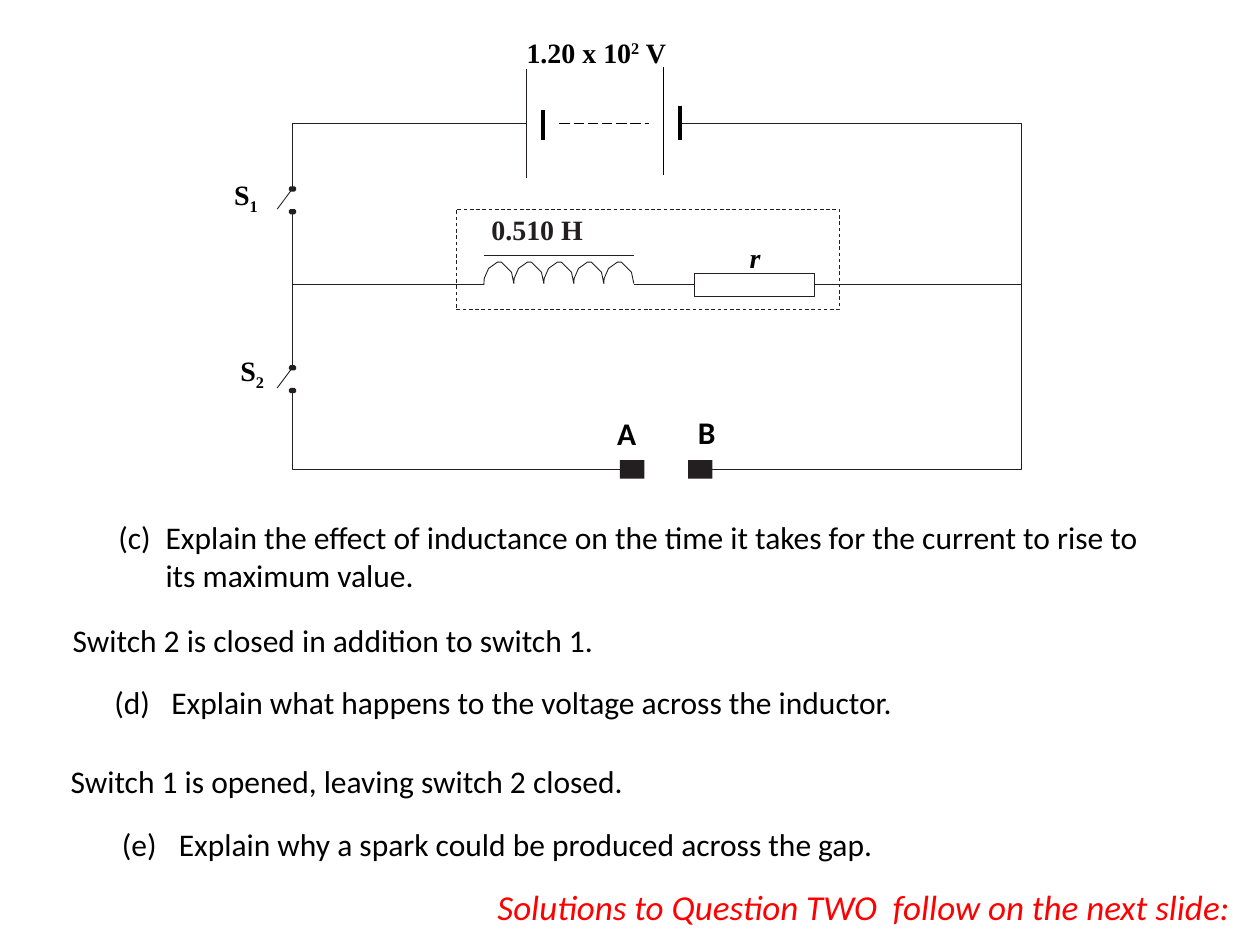
from lxml import etree
from pptx import Presentation
from pptx import util as u
from pptx.dml.color import RGBColor
from pptx.enum import dml, shapes, text
from pptx.oxml import ns

INK, BLACK, RED = "231F20", "000000", "FF0000"
SERIF, SANS = "Times New Roman", "Calibri"


def color(hex_string):
    return RGBColor.from_string(hex_string)


class Board:
    """Draws on one slide; every length is in points."""

    def __init__(self, slide):
        self.slide = slide
        self.thin = 0.5

    def outline(self, shape, width, hex_string=INK, dash=None):
        shape.line.color.rgb = color(hex_string)
        shape.line.width = u.Pt(width)
        if dash is not None:
            shape.line.dash_style = dash

    def line(self, start, end, width=None, hex_string=INK, dash=None):
        connector = self.slide.shapes.add_connector(
            shapes.MSO_CONNECTOR.STRAIGHT, *[u.Pt(v) for v in (*start, *end)])
        self.outline(connector, width or self.thin, hex_string, dash)
        properties = connector.element.find(ns.qn("p:spPr"))
        etree.SubElement(properties, ns.qn("a:effectLst"))
        return connector

    def bent_line(self, points):
        points = [(u.Pt(x), u.Pt(y)) for x, y in points]
        builder = self.slide.shapes.build_freeform(*points[0])
        builder.add_line_segments(points[1:], close=False)
        shape = builder.convert_to_shape()
        shape.fill.background()
        shape.shadow.inherit = False
        self.outline(shape, self.thin)

    def box(self, left, top, width, height, fill=None, dash=None,
            kind=shapes.MSO_SHAPE.RECTANGLE):
        shape = self.slide.shapes.add_shape(
            kind, *[u.Pt(v) for v in (left, top, width, height)])
        shape.shadow.inherit = False
        if fill:
            shape.fill.solid()
            shape.fill.fore_color.rgb = color(fill)
            shape.line.fill.background()
        else:
            shape.fill.background()
            self.outline(shape, self.thin, dash=dash)
        return shape

    def text(self, left, top, width, height, *runs, font=SANS, size=18,
             hex_string=BLACK, bold=None, italic=None, wrap=False, hanging=0):
        """Each run is a string or a (string, baseline percent) pair."""
        shape = self.slide.shapes.add_textbox(
            *[u.Pt(v) for v in (left, top, width, height)])
        frame = shape.text_frame
        frame.word_wrap = wrap
        frame.auto_size = text.MSO_AUTO_SIZE.SHAPE_TO_FIT_TEXT
        paragraph = frame.paragraphs[0]
        if hanging:
            properties = paragraph._p.get_or_add_pPr()
            properties.set("marL", str(u.Pt(hanging)))
            properties.set("indent", str(-u.Pt(hanging)))
        for item in runs:
            words, baseline = (item, 0) if isinstance(item, str) else item
            run = paragraph.add_run()
            run.text = words
            run.font.name, run.font.size = font, u.Pt(size)
            run.font.bold, run.font.italic = bold, italic
            run.font.color.rgb = color(hex_string)
            if baseline:
                run._r.get_or_add_rPr().set("baseline", str(baseline * 1000))
        return frame

    def label(self, left, top, width, *runs, **style):
        return self.text(left, top, width, 26, *runs, font=SERIF, size=16,
                         bold=True, **style)

    def number(self, frame, start):
        properties = frame.paragraphs[0]._p.get_or_add_pPr()
        etree.SubElement(properties, ns.qn("a:buFont"), typeface="+mj-lt")
        etree.SubElement(properties, ns.qn("a:buAutoNum"),
                         type="alphaLcParenBoth", startAt=str(start))


presentation = Presentation()
presentation.slide_width, presentation.slide_height = u.Pt(720), u.Pt(540)
board = Board(presentation.slides.add_slide(presentation.slide_layouts[6]))

# Questions
question_c = board.text(
    60.5, 292.3, 611.3, 51,
    "Explain the effect of inductance on the time it takes for the current "
    "to rise to its maximum value.", wrap=True, hanging=27)
board.number(question_c, 3)
board.text(34.5, 351.4, 316, 29, "Switch 2 is closed in addition to switch 1.")
board.text(58.3, 386.6, 518.4, 29,
           "(d)\tExplain what happens to the voltage across the inductor.",
           wrap=True, hanging=32.5)
board.text(33.3, 432, 334, 29, "Switch 1 is opened, leaving switch 2 closed.")
board.text(62.6, 468, 495.4, 29,
           "(e)\tExplain why a spark could be produced across the gap.",
           wrap=True, hanging=32.5)

# Circuit frame
LEFT, RIGHT = 167, 584
TOP, MIDDLE, BOTTOM = 70.6, 162.7, 268.4
SWITCH_TOPS, GAP = (108, 210.2), 13
PLATE_LEFT, PLATE_RIGHT = 301, 388.8
board.bent_line([(PLATE_LEFT, TOP), (LEFT, TOP), (LEFT, SWITCH_TOPS[0])])
board.line((LEFT, SWITCH_TOPS[0] + GAP), (LEFT, SWITCH_TOPS[1]))
board.bent_line([(LEFT, SWITCH_TOPS[1] + GAP), (LEFT, BOTTOM), (360, BOTTOM)])
board.bent_line([(400.3, BOTTOM), (RIGHT, BOTTOM), (RIGHT, TOP),
                 (PLATE_RIGHT, TOP)])

# Switches
for top in SWITCH_TOPS:
    board.line((LEFT, top), (LEFT - 8.6, top + 11.5))
    for y in (top, top + GAP):
        board.box(LEFT - 1.9, y - 1.5, 4.2, 3, fill=INK,
                  kind=shapes.MSO_SHAPE.OCTAGON)

# Battery
board.line((PLATE_LEFT, 39.6), (PLATE_LEFT, 101.5))
board.line((310.3, 62.6), (310.3, 79.9), 2.25, BLACK)
board.line((319.7, TOP), (370.8, TOP), 0.75, BLACK, dml.MSO_LINE.LONG_DASH)
board.line((379, 38.2), (379, 100), hex_string=BLACK)
board.line((PLATE_RIGHT, 60.5), (PLATE_RIGHT, 79.9), 2.25, BLACK)

# Inductor: equal humps under a core line
COIL_LEFT, PITCH, HUMPS = 276.5, 17.14, 5
COIL_RIGHT = COIL_LEFT + HUMPS * PITCH
HUMP = [(0.2, 3.6), (2.7, 9.3), (7.7, 12.9), (10, 12.9), (15.8, 7.2),
        (PITCH, 0.7)]
board.bent_line([(COIL_LEFT, MIDDLE)] + [
    (COIL_LEFT + i * PITCH + x, MIDDLE - rise)
    for i in range(HUMPS) for x, rise in HUMP])
board.line((COIL_LEFT, 146.2), (COIL_RIGHT, 146.2))
board.line((LEFT, MIDDLE), (COIL_LEFT, MIDDLE))

# Resistor with its wires, and the dashed enclosure
resistor = board.box(396.7, MIDDLE - 6.5, 68.6, 13)
board.line((COIL_RIGHT, MIDDLE), (396.7, MIDDLE)).end_connect(resistor, 1)
board.line((465.3, MIDDLE), (RIGHT, MIDDLE)).begin_connect(resistor, 3)
board.box(260.6, 119.5, 218.9, 57.6, dash=dml.MSO_LINE.DASH)

# Spark gap electrodes
for left in (354.3, 393.2):
    board.box(left, BOTTOM - 5.4, 14, 10.6, fill=INK)

# Circuit labels
inductance = board.label(280.8, 126, 78.5, "0.510 H", hex_string=INK, wrap=True)
inductance.auto_size = text.MSO_AUTO_SIZE.NONE
inductance.margin_left = inductance.margin_right = 0
inductance.margin_top = inductance.margin_bottom = 0
inductance.paragraphs[0].line_spacing = 0.74
inductance.paragraphs[0].space_before = u.Pt(0.6)
inductance.paragraphs[0].space_after = u.Pt(10)
board.label(293.8, 16.6, 103.7, "1.20 x 10", ("2", 30), " V")
board.label(421.2, 133.9, 20.2, "r", italic=True, wrap=True)
board.label(126.7, 97.9, 31, "S", ("1", -25))
board.label(130.3, 198.7, 31, "S", ("2", -25))
board.text(345.6, 233.3, 26.6, 29, "A", bold=True, wrap=True)
board.text(391.7, 232.6, 27.4, 29, "B", bold=True)

# Pointer to the solutions
board.text(277.2, 502.6, 436.3, 31.7,
           "Solutions to Question TWO  follow on the next slide:",
           size=20, hex_string=RED, italic=True)

presentation.save("out.pptx")
